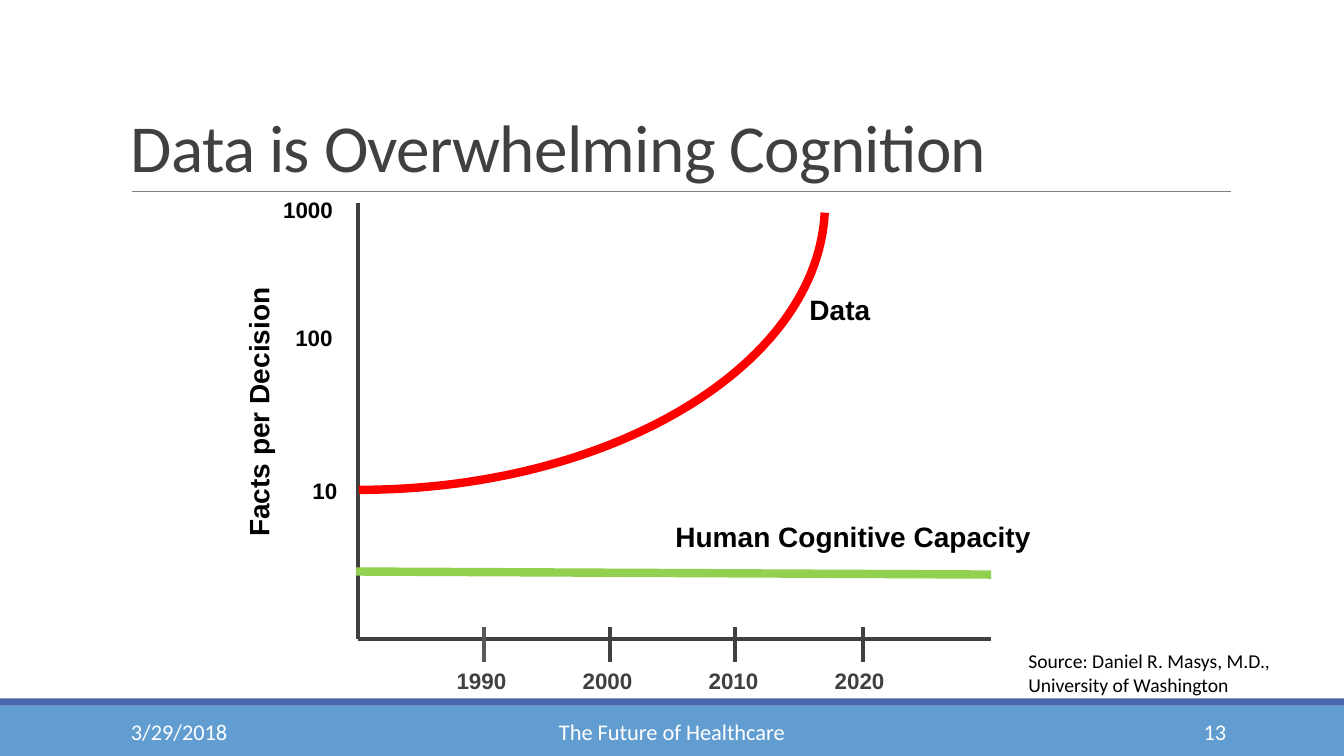
from lxml import etree
from pptx import Presentation
from pptx.dml.color import RGBColor
from pptx.enum.shapes import MSO_CONNECTOR, MSO_SHAPE
from pptx.enum.text import MSO_ANCHOR, PP_ALIGN
from pptx.oxml.ns import qn
from pptx.util import Inches, Pt

LEFT, CENTER, RIGHT = PP_ALIGN.LEFT, PP_ALIGN.CENTER, PP_ALIGN.RIGHT
TOP, MIDDLE, BOTTOM = MSO_ANCHOR.TOP, MSO_ANCHOR.MIDDLE, MSO_ANCHOR.BOTTOM
STRAIGHT, RECTANGLE = MSO_CONNECTOR.STRAIGHT, MSO_SHAPE.RECTANGLE

BLACK = RGBColor(0, 0, 0)
WHITE = RGBColor(0xFF, 0xFF, 0xFF)
DARK = RGBColor(0x40, 0x40, 0x40)
TICK_GRAY = RGBColor(0x59, 0x59, 0x59)
RULE_GRAY = RGBColor(0x80, 0x80, 0x80)
FOOTER_BLUE = RGBColor(0x62, 0x9D, 0xD1)
STRIPE_BLUE = RGBColor(0x4A, 0x66, 0xAC)
RED = RGBColor(0xFF, 0, 0)
GREEN = RGBColor(0x92, 0xD0, 0x50)

# Content; boxes are left, top, width, height in inches
TITLE = "Data is Overwhelming Cognition"
SOURCE = ["Source: Daniel R. Masys, M.D.,", "University of Washington"]
FOOTER = [
    ("3/29/2018", 1.2, 2.7, LEFT),
    ("The Future of Healthcare", 4.03, 5.27, CENTER),
    ("13", 10.83, 1.43, RIGHT),
]
Y_LABELS = [("1000", 2.71, 1.9, 0.75), ("100", 2.83, 3.17, 0.61),
            ("10", 3, 4.68, 0.46)]
Y_TITLE = ("Facts per Decision", (1.02, 3.66, 3.09, 0.44))
SERIES_LABELS = [
    ("Human Cognitive Capacity", (6.6, 5.1, 3.81, 0.44)),
    ("Data", (7.93, 2.85, 3.12, 0.44)),
]
YEARS = [("1990", 4.8, TICK_GRAY), ("2000", 6.05, DARK),
         ("2010", 7.29, DARK), ("2020", 8.56, DARK)]
YEAR_LEFT, YEAR_STEP = 4.43, 1.25
AXIS_X, AXIS_TOP, AXIS_Y, AXIS_END = 3.55, 2.01, 6.34, 9.83
DATA_BEZIER = [(3.56, 4.86), (6.05, 4.86), (8.1, 3.64), (8.18, 2.11)]
CURVE_STEPS = 60

prs = Presentation()
prs.slide_width, prs.slide_height = Inches(13.33), Inches(7.5)
s = prs.slides.add_slide(prs.slide_layouts[6])


def add_text(lines, box, size, color, font="Calibri", bold=False,
             align=LEFT, anchor=TOP):
    sp = s.shapes.add_textbox(*map(Inches, box))
    tf = sp.text_frame
    tf.word_wrap = True
    tf.vertical_anchor = anchor
    tf.text = "\n".join(lines)
    for p in tf.paragraphs:
        p.alignment = align
        p.font.name, p.font.size, p.font.bold = font, Pt(size), bold
        p.font.color.rgb = color
    return sp


def add_label(text, box, size, color=BLACK):
    return add_text([text], box, size, color, "Arial", True)


def add_line(x1, y1, x2, y2, color, width):
    line = s.shapes.add_connector(STRAIGHT, *map(Inches, (x1, y1, x2, y2)))
    line.line.color.rgb, line.line.width = color, Pt(width)
    etree.SubElement(line._element.spPr, qn("a:effectLst"))


def add_band(top, height, color):
    sp = s.shapes.add_shape(RECTANGLE, 0, Inches(top),
                            prs.slide_width, Inches(height))
    sp.shadow.inherit = False
    sp.fill.solid()
    sp.fill.fore_color.rgb = color
    sp.line.fill.background()


def bezier_point(t):
    weights = ((1 - t) ** 3, 3 * t * (1 - t) ** 2, 3 * t ** 2 * (1 - t), t ** 3)
    return tuple(Inches(sum(w * pt[i] for w, pt in zip(weights, DATA_BEZIER)))
                 for i in (0, 1))


# Footer bands and title rule
add_band(7, 0.5, FOOTER_BLUE)
add_band(6.93, 0.07, STRIPE_BLUE)
add_line(1.31, 1.9, 12.21, 1.9, RULE_GRAY, 0.5)

# Title, source and footer text
title = add_text([TITLE], (1.2, 0.31, 11, 1.59), 48, DARK, anchor=BOTTOM)
p = title.text_frame.paragraphs[0]
p.line_spacing = 0.85
p.runs[0]._r.get_or_add_rPr().set("spc", "-50")
add_text(SOURCE, (10.1, 6.39, 3.08, 0.57), 14, BLACK)
for text, left, width, align in FOOTER:
    add_text([text], (left, 7.06, width, 0.4), 16, WHITE,
             align=align, anchor=MIDDLE)

# Axes, ticks and their labels
add_line(AXIS_X, AXIS_TOP, AXIS_X, AXIS_Y, DARK, 3)
add_line(AXIS_X, AXIS_Y, AXIS_END, AXIS_Y, DARK, 3)
for i, (year, x, color) in enumerate(YEARS):
    add_line(x, 6.22, x, 6.57, color, 3)
    add_label(year, (YEAR_LEFT + i * YEAR_STEP, 6.57, 0.72, 0.37), 16, DARK)
for text, left, top, width in Y_LABELS:
    add_label(text, (left, top, width, 0.37), 16)
add_label(*Y_TITLE, 20).rotation = 270

# Data curve and cognitive capacity line
points = [bezier_point(i / CURVE_STEPS) for i in range(CURVE_STEPS + 1)]
builder = s.shapes.build_freeform(*points[0])
builder.add_line_segments(points[1:], close=False)
curve = builder.convert_to_shape()
curve.shadow.inherit = False
curve.fill.background()
curve.line.color.rgb, curve.line.width = RED, Pt(6)
add_line(3.53, 5.67, AXIS_END, 5.7, GREEN, 6)
for text, box in SERIES_LABELS:
    add_label(text, box, 20)

prs.save("out.pptx")
